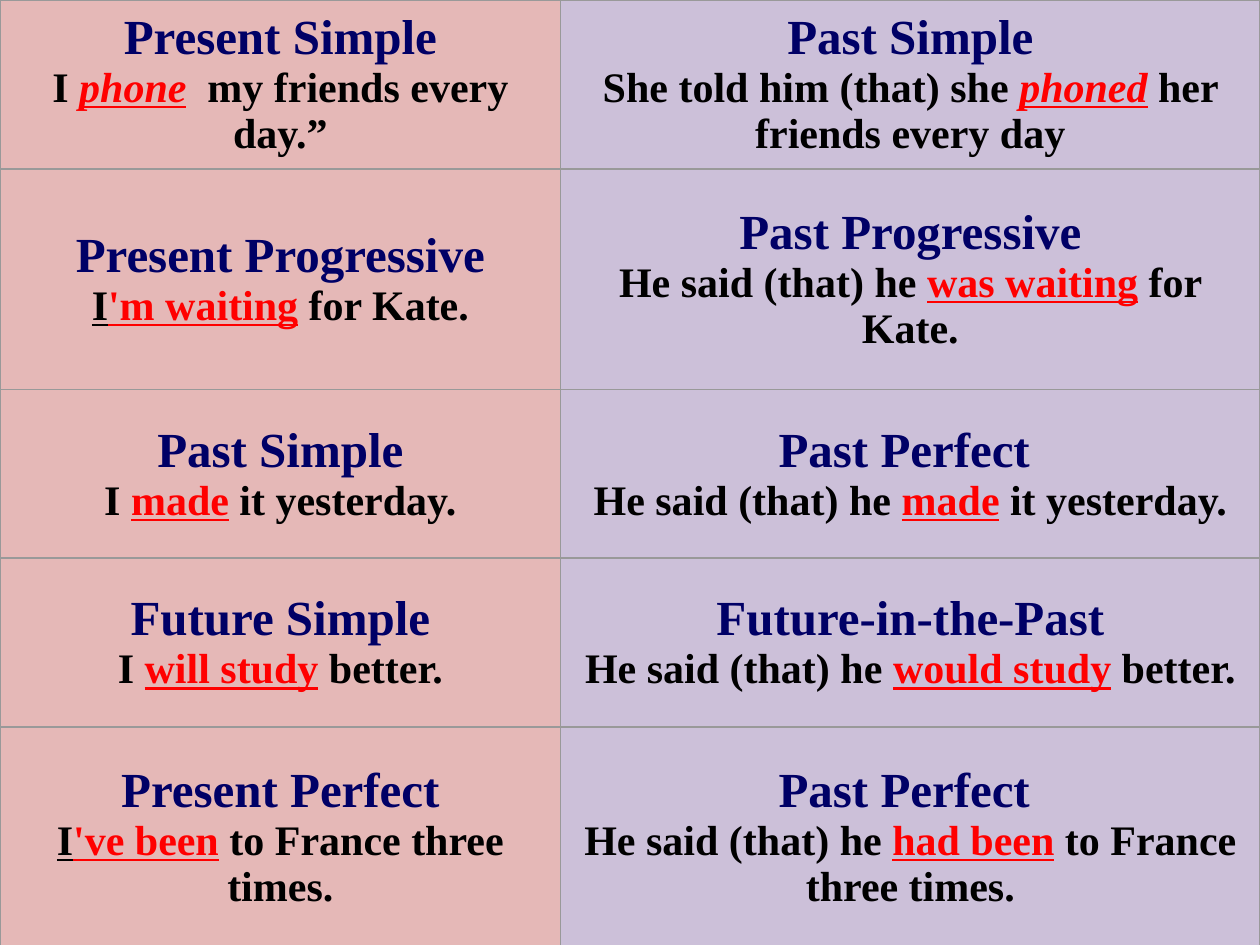
import lxml.etree
import pptx
import pptx.dml.color
import pptx.enum.text
import pptx.oxml.ns
import pptx.util

theme = {
    "font": "Times New Roman",
    "title_size": 28,
    "body_size": 24,
    "title": "000066",
    "body": "000000",
    "key": "FF0000",
    "border": "999999",
    "border_width": 1,
    "fills": ["E5B8B7", "CCC0D9"],
}
styles = {
    "plain": ("body", False, False),
    "subject": ("body", False, True),
    "verb": ("key", False, True),
    "slanted": ("key", True, True),
}
column_widths = [4.45, 5.55]
row_heights = [1.34, 1.75, 1.34, 1.34, 1.75]
tenses = [
    [
        ("Present Simple", [("I ", "plain"), ("phone", "slanted"), ("  my friends every day.”", "plain")]),
        ("Past Simple", [("She told him (that) she ", "plain"), ("phoned", "slanted"), (" her friends every day", "plain")]),
    ],
    [
        ("Present Progressive", [("I", "subject"), ("'m waiting", "verb"), (" for Kate.", "plain")]),
        ("Past Progressive", [("He said (that) he ", "plain"), ("was waiting", "verb"), (" for Kate.", "plain")]),
    ],
    [
        ("Past Simple", [("I ", "plain"), ("made", "verb"), (" it yesterday.", "plain")]),
        ("Past Perfect ", [("He said (that) he ", "plain"), ("made", "verb"), (" it yesterday.", "plain")]),
    ],
    [
        ("Future Simple", [("I ", "plain"), ("will study", "verb"), (" better.", "plain")]),
        ("Future-in-the-Past", [("He said (that) he ", "plain"), ("would study", "verb"), (" better.", "plain")]),
    ],
    [
        ("Present Perfect", [("I", "subject"), ("'ve been", "verb"), (" to France three times.", "plain")]),
        ("Past Perfect ", [("He said (that) he ", "plain"), ("had been", "verb"), (" to France three times.", "plain")]),
    ],
]


def add_span(para, text, size, color, italic=False, underline=False):
    span = para.add_run()
    span.text = text
    span.font.name = theme["font"]
    span.font.size = pptx.util.Pt(size)
    span.font.bold = True
    span.font.italic = italic
    span.font.underline = underline
    span.font.color.rgb = pptx.dml.color.RGBColor.from_string(color)


def add_borders(cell):
    properties = cell._tc.get_or_add_tcPr()
    qn = pptx.oxml.ns.qn
    for side in ("L", "R", "T", "B"):
        line = lxml.etree.SubElement(properties, qn(f"a:ln{side}"), w=str(pptx.util.Pt(theme["border_width"])))
        fill = lxml.etree.SubElement(line, qn("a:solidFill"))
        lxml.etree.SubElement(fill, qn("a:srgbClr"), val=theme["border"])


deck = pptx.Presentation()
deck.slide_width = pptx.util.Inches(10)
deck.slide_height = pptx.util.Inches(7.5)
page = deck.slides.add_slide(deck.slide_layouts[6])

frame = page.shapes.add_table(
    len(row_heights), len(column_widths), 0, 0,
    deck.slide_width, pptx.util.Inches(sum(row_heights)),
)
table = frame.table
table.first_row = False
table.horz_banding = False
for column, width in zip(table.columns, column_widths):
    column.width = pptx.util.Inches(width)
for row, height in zip(table.rows, row_heights):
    row.height = pptx.util.Inches(height)

for row_index, pair in enumerate(tenses):
    for column_index, (tense, sentence) in enumerate(pair):
        cell = table.cell(row_index, column_index)
        add_borders(cell)
        cell.fill.solid()
        cell.fill.fore_color.rgb = pptx.dml.color.RGBColor.from_string(theme["fills"][column_index])
        cell.vertical_anchor = pptx.enum.text.MSO_ANCHOR.MIDDLE
        para = cell.text_frame.paragraphs[0]
        para.alignment = pptx.enum.text.PP_ALIGN.CENTER
        add_span(para, tense, theme["title_size"], theme["title"])
        para.add_line_break()
        for text, style in sentence:
            color, italic, underline = styles[style]
            add_span(para, text, theme["body_size"], theme[color], italic, underline)

deck.save("out.pptx")
